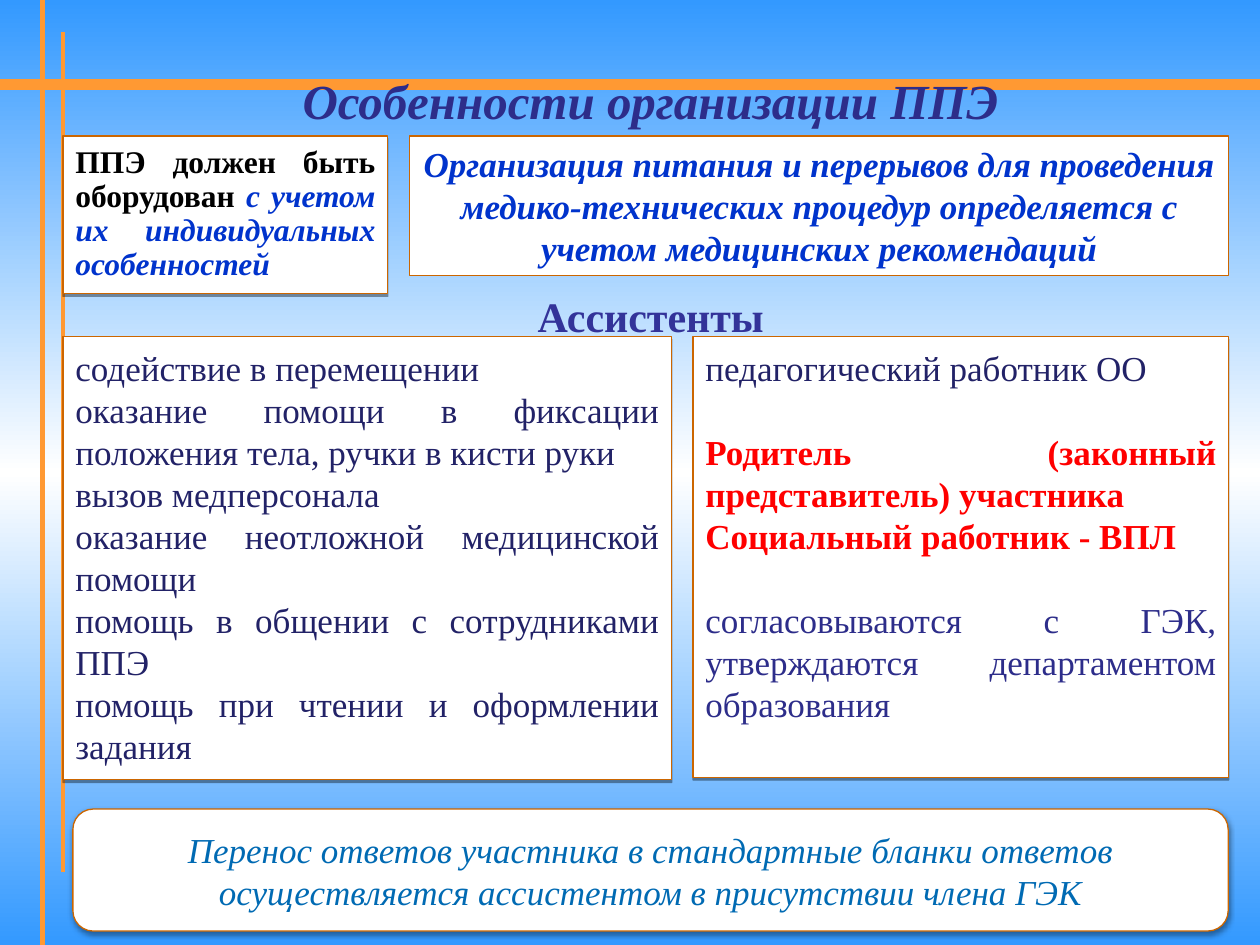
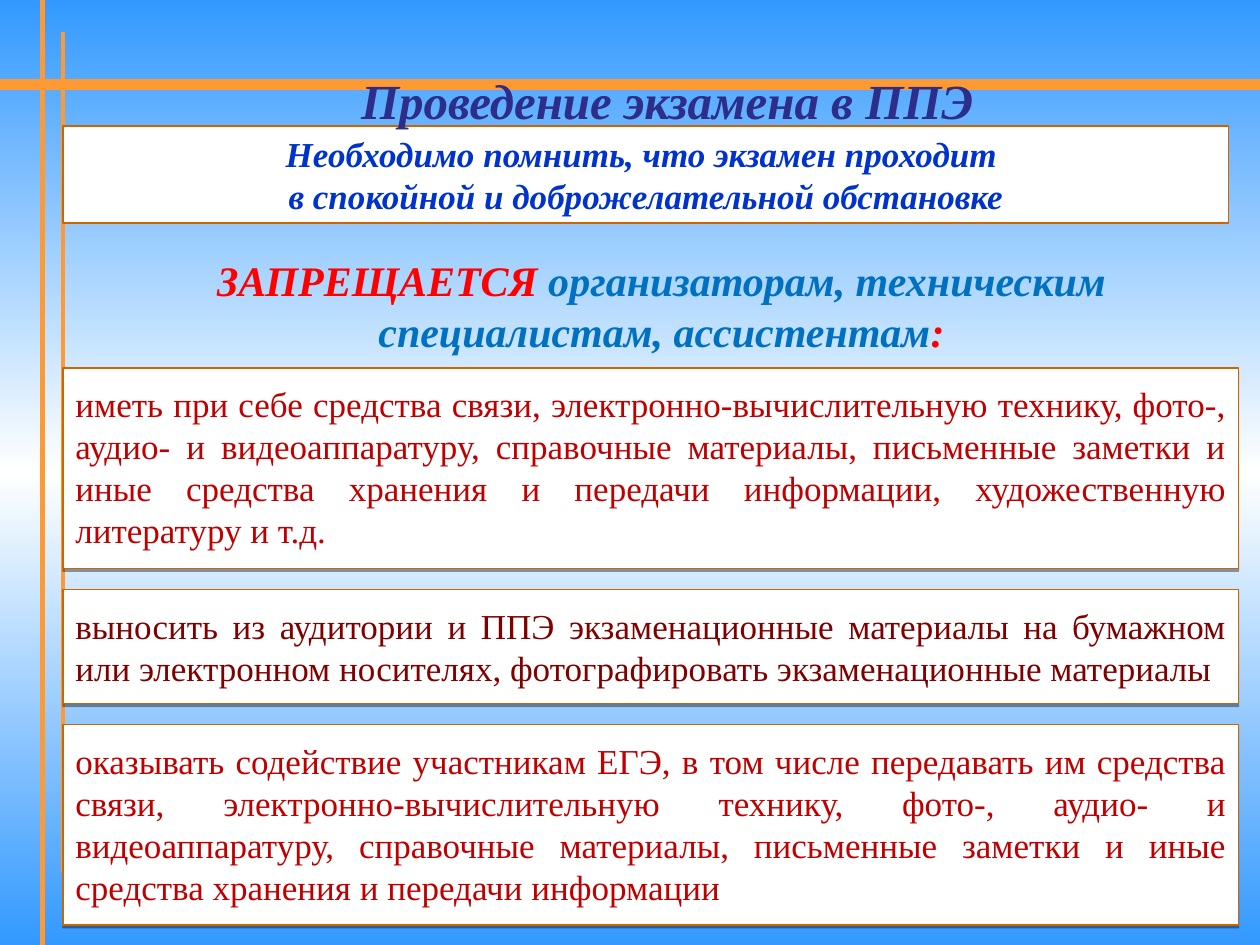
from copy import deepcopy

from lxml.etree import SubElement
from pptx import Presentation
from pptx.dml.color import RGBColor
from pptx.enum.shapes import MSO_CONNECTOR, MSO_SHAPE
from pptx.enum.text import MSO_ANCHOR, MSO_AUTO_SIZE, PP_ALIGN
from pptx.oxml.ns import qn
from pptx.util import Cm, Pt

WIDTH, HEIGHT = 25.4, 19.05
LEFT = 1.27
FONT = "Times New Roman"
SKY = RGBColor(0x33, 0x99, 0xFF)
WHITE = RGBColor(0xFF, 0xFF, 0xFF)
BLACK = RGBColor(0, 0, 0)
ORANGE = RGBColor(0xFF, 0x99, 0x33)
RUST = RGBColor(0xCC, 0x66, 0x00)
INDIGO = RGBColor(0x2D, 0x2D, 0x8A)
VIOLET = RGBColor(0x33, 0x33, 0x99)
NAVY = RGBColor(0x22, 0x22, 0x67)
BLUE = RGBColor(0x00, 0x33, 0xCC)
TEAL = RGBColor(0x00, 0x6A, 0xB3)
AZURE = RGBColor(0x00, 0x70, 0xC0)
RED = RGBColor(0xFF, 0x00, 0x00)
CRIMSON = RGBColor(0xC0, 0x00, 0x00)
MAROON = RGBColor(0x80, 0x00, 0x00)
JUST, CENTER = PP_ALIGN.JUSTIFY, PP_ALIGN.CENTER
TOP, MIDDLE = MSO_ANCHOR.TOP, MSO_ANCHOR.MIDDLE


def dress(master, slide):
    """Give the master its sky gradient and orange lines, drawn via a slide."""
    fill = master.background.fill
    fill.gradient()
    fill.gradient_angle = 270
    stops = master.element.find(".//" + qn("a:gsLst"))
    stops.append(deepcopy(stops[0]))
    for stop, color, place in zip(fill.gradient_stops, (SKY, WHITE, SKY), (0, 0.5, 1)):
        stop.color.rgb = color
        stop.position = place
    for ends, weight in (((0, 1.7, WIDTH, 1.7), 6),
                         ((0.85, 0, 0.85, HEIGHT), 3),
                         ((LEFT, 0.64, LEFT, 17.57), 2.25)):
        line = slide.shapes.add_connector(MSO_CONNECTOR.STRAIGHT, *map(Cm, ends))
        line.line.color.rgb = ORANGE
        line.line.width = Pt(weight)
        SubElement(line.element.spPr, qn("a:effectLst"))
        master.element.cSld.spTree.append(line.element)


def put(shape, box):
    """Move a shape to a box of left, top, width and height in cm."""
    shape.left, shape.top, shape.width, shape.height = map(Cm, box)


def write(shape, paras, size, align=CENTER, anchor=TOP, pad=(0.25, 0.13)):
    """Fill a shape with paragraphs, each a list of (text, colour, style) runs."""
    frame = shape.text_frame
    frame.word_wrap = True
    frame.auto_size = MSO_AUTO_SIZE.NONE
    frame.vertical_anchor = anchor
    frame.margin_left = frame.margin_right = Cm(pad[0])
    frame.margin_top = frame.margin_bottom = Cm(pad[1])
    for index, parts in enumerate(paras):
        para = frame.add_paragraph() if index else frame.paragraphs[0]
        props = para._p.get_or_add_pPr()
        props.set("marL", "0")
        props.set("indent", "0")
        SubElement(props, qn("a:buNone"))
        para.alignment = align
        para.space_before = Pt(0)
        for text, color, style in parts:
            run = para.add_run()
            run.text = text
            font = run.font
            font.name, font.size = FONT, Pt(size)
            font.bold, font.italic = "b" in style, "i" in style
            font.color.rgb = color


def paint(shape, blur=None):
    """Make a white card with a rust edge; a blur in points adds a shadow."""
    shape.fill.solid()
    shape.fill.fore_color.rgb = WHITE
    shape.line.color.rgb = RUST
    shape.line.width = Pt(0.75)
    shape.shadow.inherit = False
    if blur is not None:
        effects = shape.element.spPr.find(qn("a:effectLst"))
        shade = SubElement(effects, qn("a:outerShdw"), blurRad=str(Pt(blur)),
                           dist=str(Pt(1.6)), dir="5400000", rotWithShape="0")
        tone = SubElement(shade, qn("a:srgbClr"), val="000000")
        SubElement(tone, qn("a:alpha"), val="38000")


def card(slide, box, paras, size=20, blur=None, kind=MSO_SHAPE.RECTANGLE, **look):
    """Draw a white card with text."""
    shape = slide.shapes.add_shape(kind, *map(Cm, box))
    paint(shape, blur)
    write(shape, paras, size, **look)
    return shape


def label(slide, box, parts, **look):
    """Draw a line of free text."""
    write(slide.shapes.add_textbox(*map(Cm, box)), [parts], 24, **look)


def head(slide, box, text):
    """Place and style the slide title."""
    put(slide.shapes.title, box)
    write(slide.shapes.title, [[(text, INDIGO, "bi")]], 28, anchor=MIDDLE)


def panel(holder, box, paras):
    """Turn a body placeholder into a card with a list."""
    put(holder, box)
    paint(holder, 0)
    write(holder, paras, 20, JUST, pad=(0.25, 0.2))


def setup(slide):
    """Build the slide on how the exam site is set up."""
    head(slide, (LEFT, 1.27, 23.93, 1.47), "Особенности организации ППЭ ")
    gear = card(slide, (LEFT, 2.74, 6.55, 3.18), [[
        ("ППЭ должен быть оборудован", BLACK, "b"),
        (" с учетом их индивидуальных особенностей", BLUE, "bi"),
    ]], 18, 0, align=JUST, pad=(0.25, 0.2))
    gear.text_frame.paragraphs[0].line_spacing = 0.9
    card(slide, (8.26, 2.74, 16.51, 2.82), [[(
        "Организация питания и перерывов для проведения медико-технических "
        "процедур определяется с учетом медицинских рекомендаций", BLUE, "bi")]])
    label(slide, (7.42, 5.77, 11.4, 1.17), [("Ассистенты", VIOLET, "b")], pad=(0.15, 0.08))

    tasks = ("содействие в перемещении",
             "оказание помощи в фиксации положения тела, ручки в кисти руки",
             "вызов медперсонала",
             "оказание неотложной медицинской помощи",
             "помощь в общении с сотрудниками ППЭ",
             "помощь при чтении и оформлении задания")
    people = (("педагогический работник ОО", NAVY, ""),
              ("Родитель (законный представитель) участника ", RED, "b"),
              ("Социальный работник - ВПЛ", RED, "b"),
              ("согласовываются с ГЭК, утверждаются департаментом образования ", INDIGO, ""))
    left, right = list(slide.placeholders)[1:3]
    panel(left, (LEFT, 6.78, 12.27, 8.94), [[(task, NAVY, "")] for task in tasks])
    panel(right, (13.97, 6.78, 10.8, 8.89), [[part] for part in people])
    for index in (1, 3):
        right.text_frame.paragraphs[index].space_before = Pt(24)

    card(slide, (1.47, 16.31, 23.29, 2.46), [[(
        "Перенос ответов участника в стандартные бланки ответов "
        "осуществляется ассистентом в присутствии члена ГЭК", TEAL, "i")]],
        blur=3.1, kind=MSO_SHAPE.ROUNDED_RECTANGLE, anchor=MIDDLE, pad=(0.15, 0.08))


def rules(slide):
    """Build the slide on what is banned during the exam."""
    calm = card(slide, (LEFT, 2.54, 23.5, 1.96), [
        [("Необходимо помнить, что экзамен проходит ", BLUE, "bi")],
        [("в спокойной и доброжелательной обстановке", BLUE, "bi")]])
    slide.shapes.element.insert(2, calm.element)
    head(slide, (1.7, 1.47, 23.5, 1.07), "Проведение экзамена в ППЭ")
    label(slide, (LEFT, 4.88, 24.13, 2.54), [
        ("ЗАПРЕЩАЕТСЯ ", RED, "bi"),
        ("организаторам, техническим специалистам, ассистентам", AZURE, "bi"),
        (":", RED, "bi")], anchor=MIDDLE)
    bans = (
        (4.04, CRIMSON, "иметь при себе средства связи, электронно-вычислительную технику, "
         "фото-, аудио- и видеоаппаратуру, справочные материалы, письменные заметки и иные "
         "средства хранения и передачи информации, художественную литературу и т.д."),
        (2.31, MAROON, "выносить из аудитории и ППЭ экзаменационные материалы на бумажном "
         "или электронном носителях, фотографировать экзаменационные материалы "),
        (4.04, CRIMSON, "оказывать содействие участникам ЕГЭ, в том числе передавать им "
         "средства связи, электронно-вычислительную технику, фото-, аудио- и "
         "видеоаппаратуру, справочные материалы, письменные заметки и иные средства "
         "хранения и передачи информации"))
    top, gap = 7.42, 0.42
    for height, color, text in bans:
        card(slide, (LEFT, top, 23.7, height), [[(text, color, "")]],
             blur=0, align=JUST, pad=(0.25, 0.3))
        top += height + gap


def main():
    """Build and save the deck."""
    deck = Presentation()
    deck.slide_width, deck.slide_height = Cm(WIDTH), Cm(HEIGHT)
    first = deck.slides.add_slide(deck.slide_layouts.get_by_name("Two Content"))
    dress(deck.slide_master, first)
    setup(first)
    rules(deck.slides.add_slide(deck.slide_layouts.get_by_name("Title Only")))
    deck.save("out.pptx")


if __name__ == "__main__":
    main()
